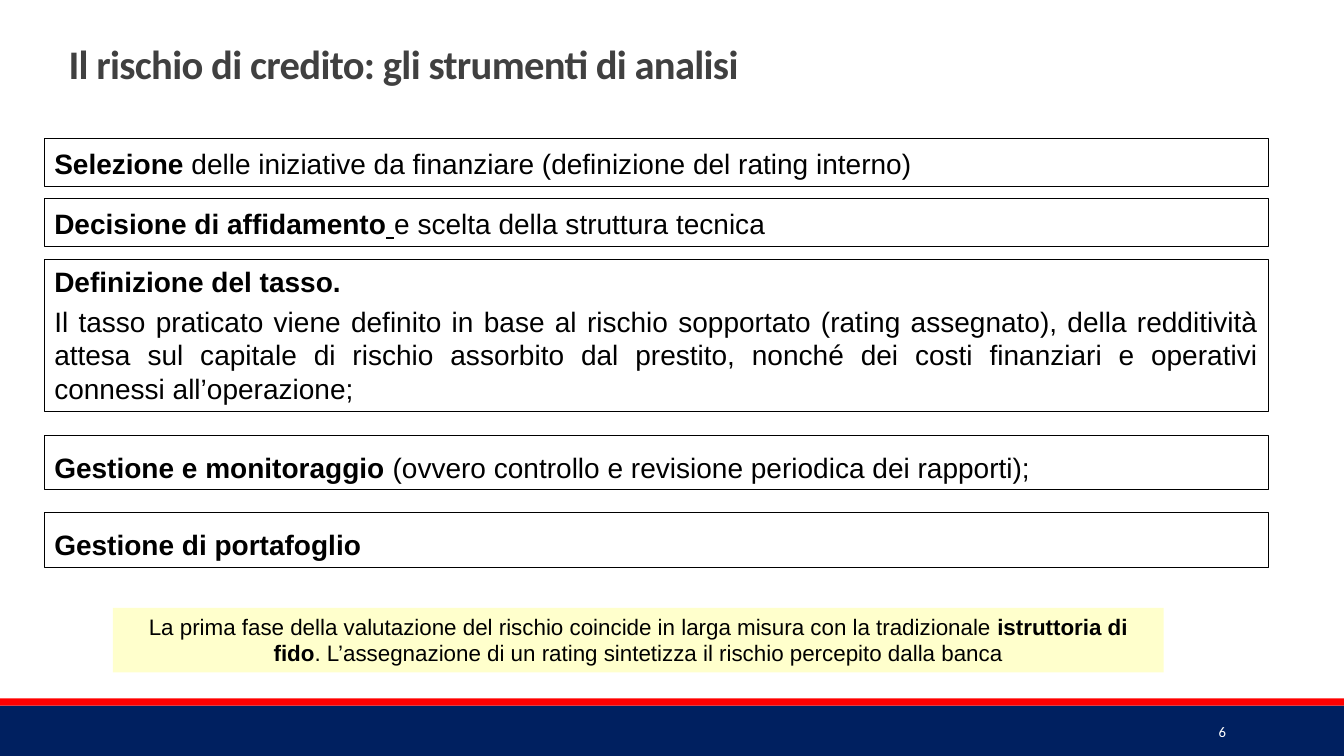
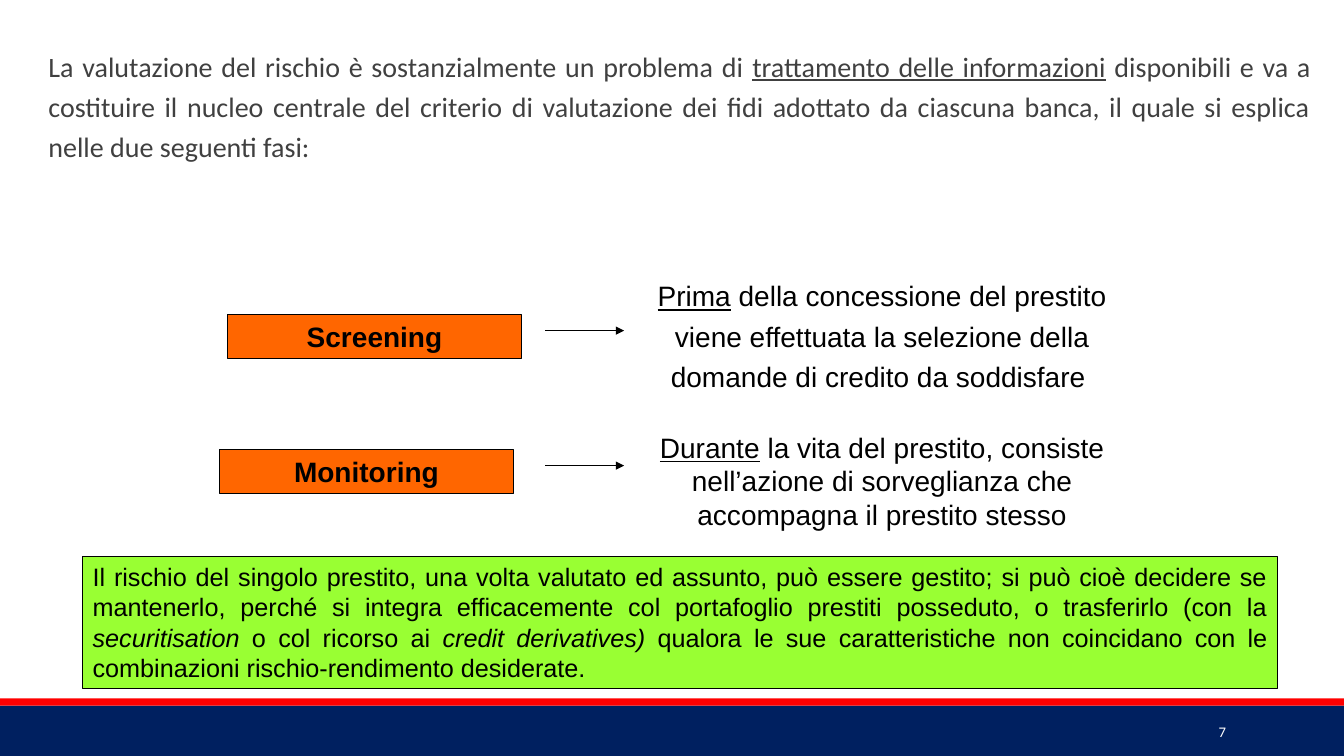
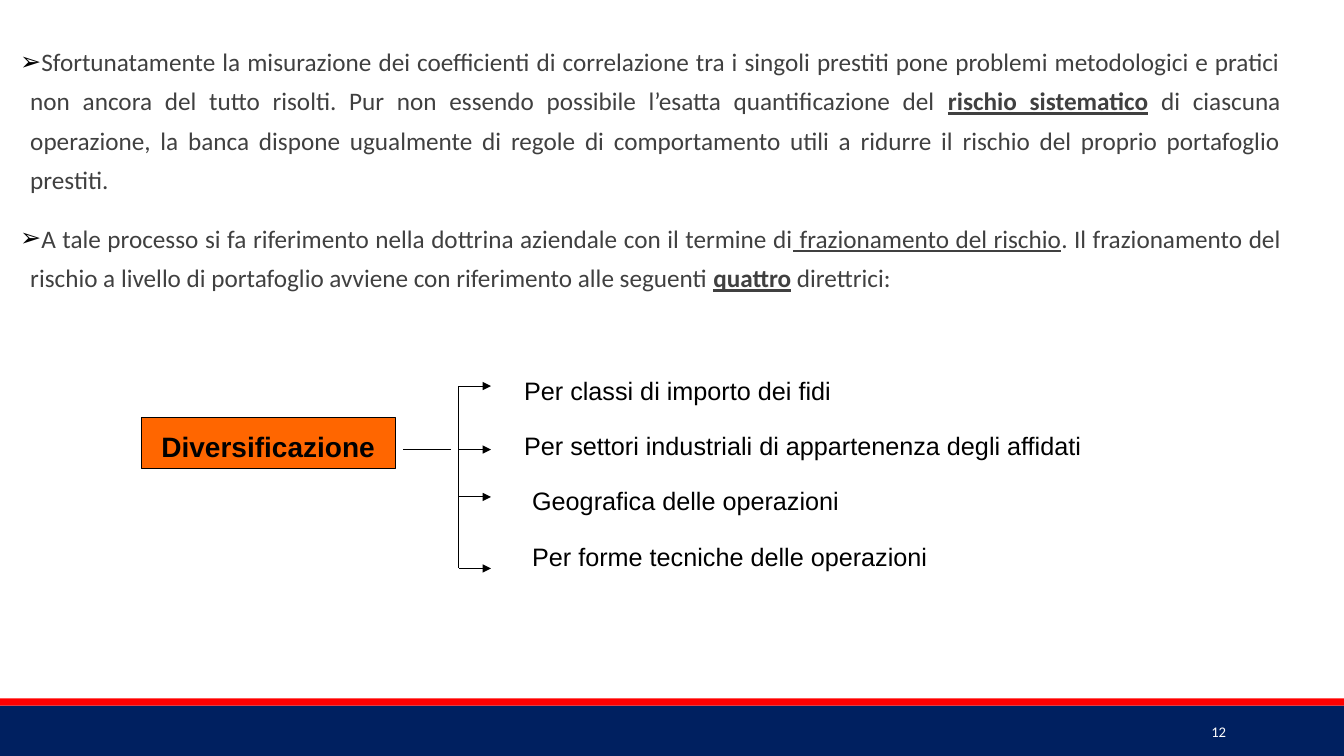
"""Build three slides on the tools for analysing credit risk."""
import pptx
import pptx.dml.color
import pptx.enum.shapes
import pptx.enum.text
import pptx.oxml.ns
import pptx.oxml.xmlchemy
import pptx.util

Inches = pptx.util.Inches
Pt = pptx.util.Pt
ALIGN = pptx.enum.text.PP_ALIGN
ANCHOR = pptx.enum.text.MSO_ANCHOR
RECT = pptx.enum.shapes.MSO_SHAPE.RECTANGLE
qn = pptx.oxml.ns.qn
new_element = pptx.oxml.xmlchemy.OxmlElement

COLORS = {
    "navy": "002060", "red": "FF0000", "white": "FFFFFF", "black": "000000",
    "gray": "404040", "orange": "FF6600", "green": "99FF33", "cream": "FFFFCC",
}
TITLE_ONLY, TITLE_CONTENT = 5, 1


def rgb(name):
    """Return a named palette colour."""
    return pptx.dml.color.RGBColor.from_string(COLORS[name])


def place(sp, box):
    """Move a shape to a (left, top, width, height) box in inches."""
    sp.left, sp.top, sp.width, sp.height = [Inches(v) for v in box]


def write(sp, paragraphs, size=20, font="Arial", color="black", align=ALIGN.LEFT,
          spacing=1.0, before=0, after=0, anchor=ANCHOR.TOP):
    """Fill a shape with paragraphs of (text, style letters) runs."""
    tf = sp.text_frame
    tf.word_wrap = True
    tf.auto_size = pptx.enum.text.MSO_AUTO_SIZE.NONE
    tf.vertical_anchor = anchor
    for i, runs in enumerate(paragraphs):
        p = tf.add_paragraph() if i else tf.paragraphs[0]
        p.alignment, p.line_spacing = align, spacing
        p.space_before, p.space_after = Pt(before), Pt(after)
        for text, style in runs:
            r = p.add_run()
            r.text = text
            r.font.name, r.font.size = font, Pt(size)
            r.font.color.rgb = rgb(color)
            r.font.bold, r.font.italic = "b" in style, "i" in style
            r.font.underline = "u" in style


def add_box(s, box, fill=None, line=None):
    """Add a rectangle with an optional fill and outline."""
    sp = s.shapes.add_shape(RECT, *[Inches(v) for v in box])
    sp.shadow.inherit = False
    if fill:
        sp.fill.solid()
        sp.fill.fore_color.rgb = rgb(fill)
    else:
        sp.fill.background()
    if line:
        sp.line.color.rgb = rgb(line)
        sp.line.width = Pt(0.75)
    else:
        sp.line.fill.background()
    return sp


def add_text(s, box, paragraphs, **style):
    """Add a text box."""
    sp = s.shapes.add_textbox(*[Inches(v) for v in box])
    write(sp, paragraphs, **style)


def add_label(s, box, text, spacing=1.0):
    """Add an orange label with bold centred text."""
    sp = add_box(s, box, "orange", "black")
    write(sp, [[(text, "b")]], align=ALIGN.CENTER, spacing=spacing)


def add_line(s, x1, y1, x2, y2, arrow=False):
    """Add a thin black line, with an arrowhead at its end if asked."""
    cx = s.shapes.add_connector(pptx.enum.shapes.MSO_CONNECTOR.STRAIGHT,
                                *[Inches(v) for v in (x1, y1, x2, y2)])
    cx.line.color.rgb = rgb("black")
    cx.line.width = Pt(0.75)
    sppr = cx.element.find(qn("p:spPr"))
    if arrow:
        tail = new_element("a:tailEnd")
        tail.set("type", "triangle")
        sppr.find(qn("a:ln")).append(tail)
    sppr.append(new_element("a:effectLst"))


def add_bands(prs, s):
    """Build the footer bands on a slide and move them to the master."""
    bands = [((0, 7, 13.33, 0.5), "navy"), ((0, 6.93, 13.33, 0.07), "red")]
    for i, (box, fill) in enumerate(bands):
        sp = add_box(s, box, fill)
        sp.element.xpath("./p:nvSpPr/p:cNvPr")[0].set("id", str(20 + i))
        prs.slide_master.shapes.element.append(sp.element)


def add_page(prs, layout, number):
    """Add a slide with its page number."""
    s = prs.slides.add_slide(prs.slide_layouts[layout])
    add_text(s, (10.83, 7.06, 1.43, 0.4), [[(number, "")]], size=10.5, font="Calibri",
             color="white", align=ALIGN.RIGHT, anchor=ANCHOR.MIDDLE)
    return s


def set_title(s, box, text):
    """Place and format the slide title."""
    sp = s.shapes.title
    place(sp, box)
    write(sp, [[(text, "b")]], size=29, font="Calibri", color="gray", spacing=0.85,
          anchor=ANCHOR.BOTTOM)
    for r in sp.text_frame.paragraphs[0].runs:
        r.font._element.set("spc", "-50")


def set_body(s, box, paragraphs, size, spacing, bullet=None):
    """Place the body text and drop the unused title."""
    title = s.shapes.title.element
    title.getparent().remove(title)
    sp = s.placeholders[1]
    place(sp, box)
    write(sp, paragraphs, size=size, font="Calibri", color="gray", align=ALIGN.JUSTIFY,
          spacing=spacing, before=12, after=2)
    tf = sp.text_frame
    tf.margin_left = tf.margin_right = 0
    tf.margin_top = tf.margin_bottom = Inches(0.05)
    hang = Inches(0.1) if bullet else 0
    for p in tf.paragraphs:
        ppr = p._p.get_or_add_pPr()
        ppr.set("marL", str(hang))
        ppr.set("indent", str(-hang))
        if bullet:
            clr = new_element("a:buClr")
            val = new_element("a:srgbClr")
            val.set("val", COLORS["black"])
            clr.append(val)
            char = new_element("a:buChar")
            char.set("char", bullet)
            ppr.extend([clr, char])
        else:
            ppr.append(new_element("a:buNone"))


def add_steps(s, left, width):
    """Stack the outlined boxes of the credit process."""
    steps = [
        (1.37, 0.48, 1.1, ALIGN.LEFT, [[
            ("Selezione", "b"),
            (" delle iniziative da finanziare (definizione del rating interno)", "")]]),
        (1.97, 0.48, 1.1, ALIGN.LEFT, [[
            ("Decisione di affidamento", "b"), (" ", "u"),
            ("e scelta della struttura tecnica", "")]]),
        (2.57, 1.51, 1.0, ALIGN.JUSTIFY, [
            [("Definizione del tasso. ", "b")],
            [("Il tasso praticato viene definito in base al rischio sopportato (rating "
              "assegnato), della redditività attesa sul capitale di rischio assorbito dal "
              "prestito, nonché dei costi finanziari e operativi connessi "
              "all’operazione;", "")]]),
        (4.32, 0.54, 1.3, ALIGN.JUSTIFY, [[
            ("Gestione e monitoraggio", "b"),
            (" (ovvero controllo e revisione periodica dei rapporti);", "")]]),
        (5.08, 0.55, 1.3, ALIGN.JUSTIFY, [[("Gestione di portafoglio", "b")]]),
    ]
    for top, height, spacing, align, paragraphs in steps:
        sp = add_box(s, (left, top, width, height), line="black")
        write(sp, paragraphs, align=align, spacing=spacing, before=4.6)


def add_phase(s, left, top, label, text_top, text_height, runs, spacing):
    """Add a label, an arrow and the description it points to."""
    add_label(s, (left, top, 2.91, 0.44), label)
    add_line(s, 5.41, top + 0.16, 6.19, top + 0.16, arrow=True)
    add_text(s, (6.35, text_top, 4.8, text_height), [runs], align=ALIGN.CENTER,
             spacing=spacing)


def add_branches(s, left, top):
    """Add the diversification label with its four branches."""
    add_label(s, (left, top + 0.47, 2.52, 0.51), "Diversificazione", 1.2)
    items = [(0, "Per classi di importo dei fidi"),
             (0, "Per settori industriali di appartenenza degli affidati"),
             (0.08, "Geografica delle operazioni"),
             (0.08, "Per forme tecniche delle operazioni")]
    for i, (shift, text) in enumerate(items):
        add_text(s, (left + 3.7 + shift, top + 0.55 * i, 5.87, 0.4), [[(text, "")]], size=18)
    trunk = left + 3.15
    arrows = [top + d for d in (0.16, 0.79, 1.26, 1.97)]
    add_line(s, left + 2.6, arrows[1], left + 3.07, arrows[1])
    add_line(s, trunk, arrows[0], trunk, arrows[-1])
    for y in arrows:
        add_line(s, trunk, y, trunk + 0.32, y, arrow=True)


def build_tools(prs):
    """Build the slide on the tools of analysis."""
    s = add_page(prs, TITLE_ONLY, "6")
    add_bands(prs, s)
    set_title(s, (0.58, 0.21, 8.91, 0.71), "Il rischio di credito: gli strumenti di analisi")
    add_steps(s, 0.44, 12.14)
    sp = add_box(s, (1.12, 6.03, 10.42, 0.64), "cream")
    write(sp, [[
        ("La prima fase della valutazione del rischio coincide in larga misura con la "
         "tradizionale ", ""),
        ("istruttoria di fido", "b"),
        (". L’assegnazione di un rating sintetizza il rischio percepito dalla banca", ""),
    ]], size=16, align=ALIGN.CENTER)


def build_phases(prs):
    """Build the slide on screening and monitoring."""
    s = add_page(prs, TITLE_CONTENT, "7")
    set_body(s, (0.48, 0.37, 12.52, 1.73), [[
        ("La valutazione del rischio è sostanzialmente un problema di ", ""),
        ("trattamento delle informazioni", "u"),
        (" disponibili e va a costituire il nucleo centrale del criterio di valutazione dei "
         "fidi adottato da ciascuna banca, il quale si esplica nelle due seguenti fasi:", ""),
    ]], 20, 1.2)
    add_phase(s, 2.26, 3.12, "Screening", 2.65, 1.31, [
        ("Prima", "u"),
        (" della concessione del prestito viene effettuata la selezione della domande di "
         "credito da soddisfare ", "")], 1.2)
    add_phase(s, 2.18, 4.46, "Monitoring", 4.22, 1.1, [
        ("Durante", "u"),
        (" la vita del prestito, consiste nell’azione di sorveglianza che accompagna il "
         "prestito stesso", "")], 1.0)
    sp = add_box(s, (0.82, 5.52, 11.85, 1.31), "green", "black")
    write(sp, [[
        ("Il rischio del singolo prestito, una volta valutato ed assunto, può essere gestito; "
         "si può cioè decidere se mantenerlo, perché si integra efficacemente col portafoglio "
         "prestiti posseduto, o trasferirlo (con la ", ""),
        ("securitisation", "i"), (" o col ricorso ai ", ""), ("credit derivatives)", "i"),
        (" qualora le sue caratteristiche non coincidano con le combinazioni "
         "rischio-rendimento desiderate.", ""),
    ]], size=18, align=ALIGN.JUSTIFY)


def build_diversification(prs):
    """Build the slide on the diversification of the portfolio."""
    s = add_page(prs, TITLE_CONTENT, "12")
    set_body(s, (0.2, 0.32, 12.5, 3.54), [
        [("Sfortunatamente la misurazione dei coefficienti di correlazione tra i singoli "
          "prestiti pone problemi metodologici e pratici non ancora del tutto risolti. Pur non "
          "essendo possibile l’esatta quantificazione del ", ""),
         ("rischio sistematico", "bu"),
         (" di ciascuna operazione, la banca dispone ugualmente di regole di comportamento "
          "utili a ridurre il rischio del proprio portafoglio prestiti.", "")],
        [("A tale processo si fa riferimento nella dottrina aziendale con il termine di", ""),
         (" frazionamento del rischio", "u"),
         (". Il frazionamento del rischio a livello di portafoglio avviene con riferimento "
          "alle seguenti ", ""),
         ("quattro", "bu"), (" direttrici:", "")],
    ], 18, 1.3, bullet="➢")
    add_branches(s, 1.4, 3.67)


def main():
    """Build and save the presentation."""
    prs = pptx.Presentation()
    prs.slide_width, prs.slide_height = Inches(13.33), Inches(7.5)
    build_tools(prs)
    build_phases(prs)
    build_diversification(prs)
    prs.save("out.pptx")


if __name__ == "__main__":
    main()
